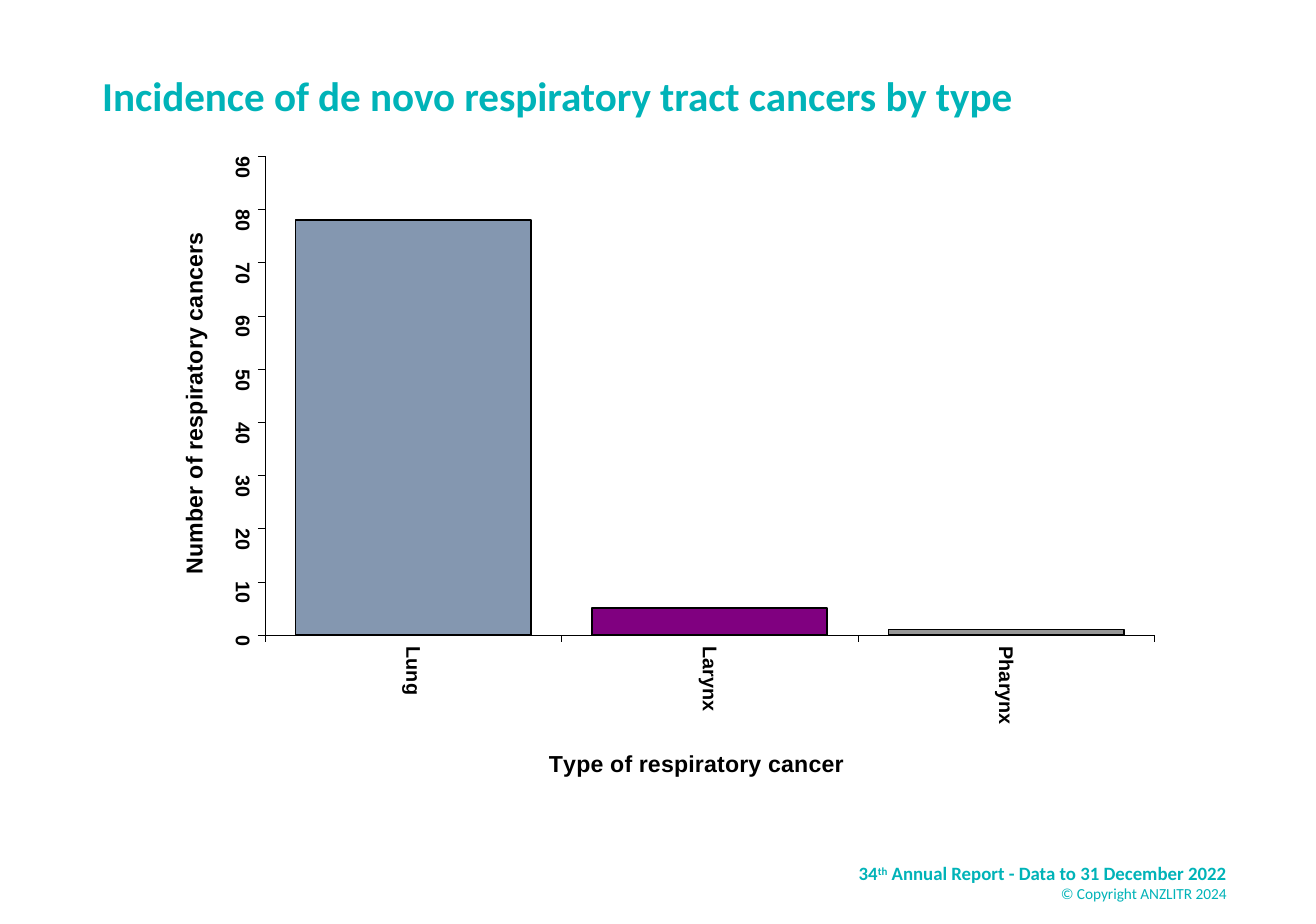
from dataclasses import dataclass

from lxml.etree import SubElement
from pptx import Presentation
from pptx.chart.data import CategoryChartData
from pptx.dml.color import RGBColor
from pptx.enum.chart import XL_CHART_TYPE as ChartType, XL_TICK_MARK as TickMark
from pptx.enum.text import MSO_ANCHOR as Anchor, PP_ALIGN as Align
from pptx.oxml import parse_xml
from pptx.oxml.ns import nsdecls, qn
from pptx.util import Cm, Pt

# Content
TITLE = "Incidence of de novo respiratory tract cancers by type"
CANCERS = [("Lung", 78, "8497B0"), ("Larynx", 5, "800080"), ("Pharynx", 1, "969696")]
CATEGORY_TITLE = "Type of respiratory cancer"
VALUE_TITLE = "Number of respiratory cancers"
FOOTER = [
    [("34", 0), ("th", 30), (" Annual Report - Data to 31 December 2022", 0)],
    [("© Copyright ANZLITR 2024", 0)],
]

# Places in centimetres: left, top, width, height
SLIDE_SIZE = (28.12, 19.74)
TITLE_AT = (1.93, 0.71, 24.23, 2.77)
CHART_AT = (3.07, 2.72, 21.97, 14.33)
FOOTER_AT = (16.99, 18.29, 9.47, 1.04)
# Chart parts as fractions of the chart
PLOT_AT = dict(x=0.118, y=0.043, w=0.865, h=0.714)
CATEGORY_TITLE_AT = dict(x=0.39, y=0.92)
VALUE_TITLE_AT = dict(x=0.03, y=0.15)
QUARTER_TURN = 90 * 60000


@dataclass(frozen=True)
class Theme:
    teal = RGBColor.from_string("00B3B8")
    black = RGBColor.from_string("000000")
    title = dict(name="Calibri", size=Pt(24.9), bold=True)
    report = dict(name="Calibri", size=Pt(11.4), bold=True)
    copyright = dict(name="Calibri", size=Pt(9.3), bold=False)
    labels = dict(name="Arial", size=Pt(12), bold=True)
    axis_title = dict(name="Arial", size=Pt(14), bold=True)


def format_font(font, values, color):
    for name, value in values.items():
        setattr(font, name, value)
    font.color.rgb = color


def format_line(line, width):
    line.color.rgb = Theme.black
    line.width = Pt(width)


def make_layout(fractions, inner=False):
    layout = parse_xml(f"<c:layout {nsdecls('c')}><c:manualLayout/></c:layout>")
    settings = {"layoutTarget": "inner"} if inner else {}
    settings |= {"xMode": "edge", "yMode": "edge"} | fractions
    for name, value in settings.items():
        SubElement(layout[0], qn(f"c:{name}")).set("val", str(value))
    return layout


def drop_layout(parent):
    for old in parent.findall(qn("c:layout")):
        parent.remove(old)


def rotate(body, angle):
    body.set("rot", str(angle))
    body.set("vert", "horz")


def format_axis(axis, text, place, angle):
    axis.has_major_gridlines = False
    axis.major_tick_mark = TickMark.OUTSIDE
    axis.minor_tick_mark = TickMark.NONE
    format_line(axis.format.line, 0.25)
    format_font(axis.tick_labels.font, Theme.labels, Theme.black)
    rotate(axis._element.find(qn("c:txPr")).find(qn("a:bodyPr")), QUARTER_TURN)
    frame = axis.axis_title.text_frame
    frame.text = text
    format_font(frame.paragraphs[0].runs[0].font, Theme.axis_title, Theme.black)
    rotate(frame._txBody.find(qn("a:bodyPr")), angle)
    title = axis.axis_title._element
    drop_layout(title)
    title.find(qn("c:tx")).addnext(make_layout(place))


def add_title(page):
    box = page.shapes.title
    box.left, box.top, box.width, box.height = map(Cm, TITLE_AT)
    frame = box.text_frame
    frame.text = TITLE
    frame.vertical_anchor = Anchor.MIDDLE
    para = frame.paragraphs[0]
    para.alignment = Align.LEFT
    para.line_spacing = 0.9
    format_font(para.runs[0].font, Theme.title, Theme.teal)


def add_cancer_chart(page):
    names, counts, colors = zip(*CANCERS)
    data = CategoryChartData(number_format="0")
    data.categories = names
    data.add_series("Series 1", counts)
    chart = page.shapes.add_chart(ChartType.COLUMN_CLUSTERED, *map(Cm, CHART_AT), data).chart
    chart.has_legend = chart.has_title = False
    format_font(chart.font, Theme.labels, Theme.black)

    # Columns
    plot = chart.plots[0]
    plot.gap_width = 26
    plot.vary_by_categories = False
    for index, color in enumerate(colors):
        style = plot.series[0].points[index].format
        style.fill.solid()
        style.fill.fore_color.rgb = RGBColor.from_string(color)
        format_line(style.line, 1.05)

    # Axes
    format_axis(chart.category_axis, CATEGORY_TITLE, CATEGORY_TITLE_AT, 0)
    values = chart.value_axis
    format_axis(values, VALUE_TITLE, VALUE_TITLE_AT, -QUARTER_TURN)
    values.minimum_scale, values.maximum_scale, values.major_unit = 0, 90, 10
    values.tick_labels.number_format = "0"
    values.tick_labels.number_format_is_linked = False

    # Plot area
    area = chart._chartSpace.chart.plotArea
    drop_layout(area)
    area.insert(0, make_layout(PLOT_AT, inner=True))


def add_footer(page):
    frame = page.shapes.add_textbox(*map(Cm, FOOTER_AT)).text_frame
    frame.word_wrap = True
    for index, (spans, style) in enumerate(zip(FOOTER, (Theme.report, Theme.copyright))):
        para = frame.add_paragraph() if index else frame.paragraphs[0]
        para.alignment = Align.RIGHT
        for text, raised in spans:
            span = para.add_run()
            span.text = text
            format_font(span.font, style, Theme.teal)
            if raised:
                span._r.get_or_add_rPr().set("baseline", str(raised * 1000))


def main():
    deck = Presentation()
    deck.slide_width, deck.slide_height = map(Cm, SLIDE_SIZE)
    page = deck.slides.add_slide(deck.slide_layouts[5])
    add_footer(page)
    add_cancer_chart(page)
    add_title(page)
    deck.save("out.pptx")


if __name__ == "__main__":
    main()
